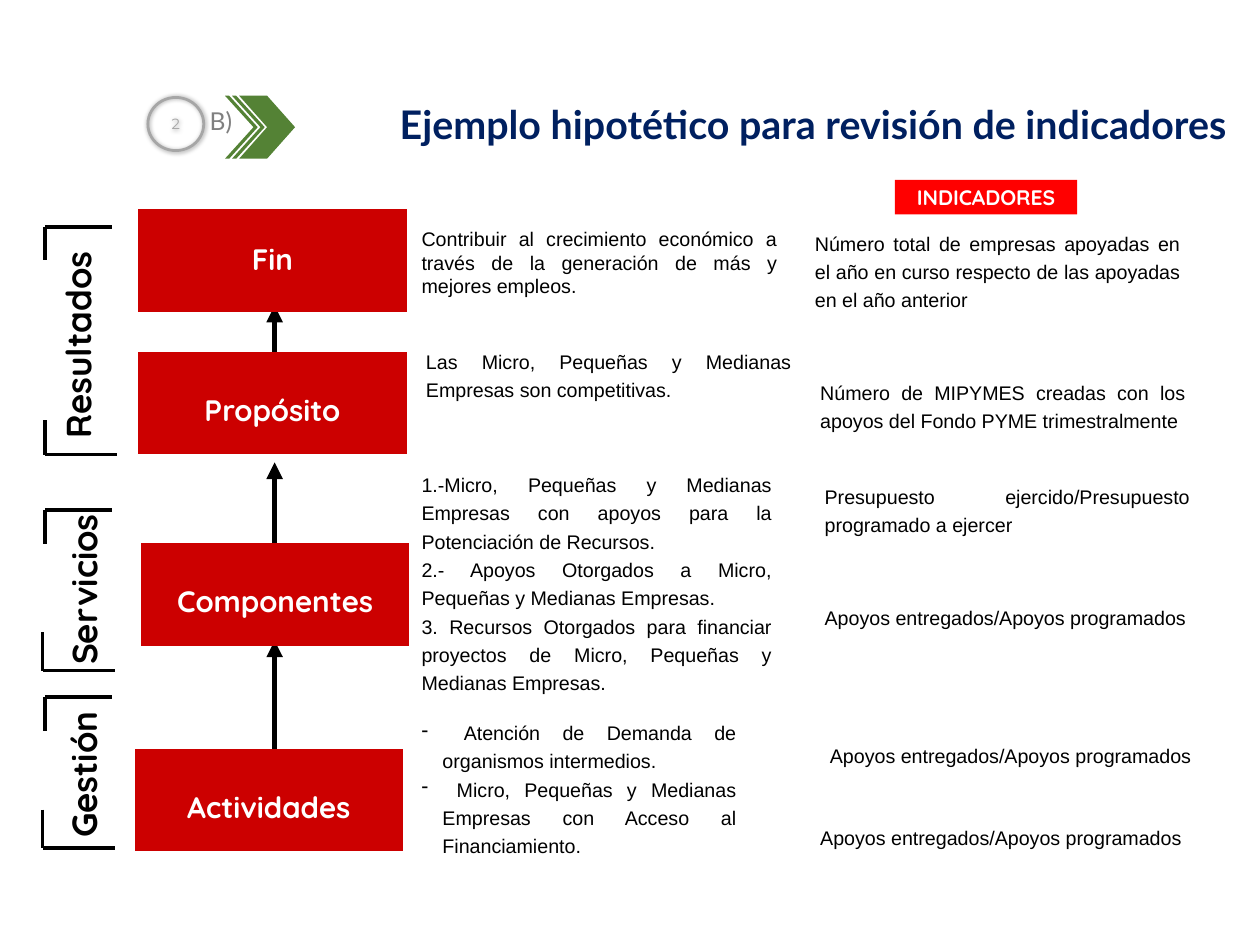
"""Build a slide on reviewing the indicators of a results hierarchy."""
import pptx
import pptx.dml.color
import pptx.enum.shapes
import pptx.enum.text
import pptx.oxml
import pptx.oxml.ns
import pptx.util

Pt = pptx.util.Pt
SHAPE = pptx.enum.shapes.MSO_SHAPE
ALIGN = pptx.enum.text.PP_ALIGN
ANCHOR = pptx.enum.text.MSO_ANCHOR

TITLE = "Ejemplo hipotético para revisión de indicadores"
DELIVERED = "Apoyos entregados/Apoyos programados"

# name, left, top, extra inset above the name
LEVELS = [
    ("Fin", 112.3, 170, 0),
    ("Propósito", 112.3, 285.8, 14),
    ("Componentes", 114.5, 441.4, 14),
    ("Actividades", 109.4, 608.4, 14),
]
LEVEL_W, LEVEL_H = 218.2, 83.5
ARROW_X, ARROW_LENGTH = 223.2, 88
ARROW_TIPS = [248.4, 375.8, 520.6]

# left, top, width, height, line spacing, paragraphs
SUMMARIES = [
    (335.5, 180, 303.1, 65.5, 1.0, [
        "Contribuir al crecimiento económico a través de la generación de más y mejores empleos."]),
    (339.1, 275.8, 311, 54, 1.2, [
        "Las Micro, Pequeñas y Medianas Empresas son competitivas."]),
    (335.5, 374.4, 298.8, 193.7, 1.2, [
        "1.-Micro, Pequeñas y Medianas Empresas con apoyos para la Potenciación de Recursos.",
        "2.- Apoyos Otorgados a Micro, Pequeñas y Medianas Empresas.",
        "3. Recursos Otorgados para financiar proyectos de Micro, Pequeñas y Medianas Empresas."]),
]
ACTIVITIES = (335.5, 576.7, 270, 123.8, 1.2, [
    " Atención de Demanda de organismos intermedios.",
    " Micro, Pequeñas y Medianas Empresas con Acceso al Financiamiento."])

# left, top, height, text
INDICATORS = [
    (655.2, 180, 77, "Número total de empresas apoyadas en el año en curso respecto de las apoyadas en el año anterior"),
    (659.5, 303.1, 51.8, "Número de MIPYMES creadas con los apoyos del Fondo PYME trimestralmente"),
    (663.1, 388.1, 51.8, "Presupuesto ejercido/Presupuesto programado a ejercer"),
    (663.1, 485.3, 30.2, DELIVERED),
    (667.4, 599, 28.1, DELIVERED),
    (659.5, 666, 28.1, DELIVERED),
]
INDICATOR_W = 311

# name, top, bottom, lower left, lower stub, name centre x, centre y, name width
STAGES = [
    ("Resultados", 184.3, 369.4, 36.7, 28, 64.8, 280.4, 185.8),
    ("Servicios", 414.7, 545, 34.6, 31, 69.8, 479.2, 142.6),
    ("Gestión", 566.6, 689, 34.6, 31, 69.5, 629.6, 121.7),
]
BRACKET_LEFT, BRACKET_RIGHT, UPPER_STUB, LOWER_W = 36.7, 91.4, 27.4, 58.5
STAGE_H = 38.2

# left, width, adjustment
CHEVRONS = [(194.4, 45.4, 0.5), (188.6, 26.6, 0.87), (182.9, 26.6, 0.87)]


def rgb(value):
    return pptx.dml.color.RGBColor.from_string(value)


def add_xml(parent, tag, content="", **attrs):
    attributes = " ".join(f'{k}="{v}"' for k, v in attrs.items())
    node = pptx.oxml.parse_xml(
        f'<a:{tag} {pptx.oxml.ns.nsdecls("a")} {attributes}>{content}</a:{tag}>')
    parent.append(node)


def write(sp, paragraphs, size, font, color, align, anchor=ANCHOR.BOTTOM,
          spacing=1.0, bold=False, wrap=True, grow=True, bullet=None):
    tf = sp.text_frame
    tf.word_wrap = wrap
    tf.vertical_anchor = anchor
    if grow:
        tf.auto_size = pptx.enum.text.MSO_AUTO_SIZE.SHAPE_TO_FIT_TEXT
    for i, text in enumerate(paragraphs):
        p = tf.add_paragraph() if i else tf.paragraphs[0]
        if bullet:
            pPr = p._p.get_or_add_pPr()
            pPr.set("marL", str(Pt(17)))
            pPr.set("indent", str(-Pt(17)))
            add_xml(pPr, "buChar", char=bullet)
        p.alignment = align
        p.line_spacing = spacing
        r = p.add_run()
        r.text = text
        r.font.size = Pt(size)
        r.font.name = font
        r.font.bold = bold
        r.font.color.rgb = rgb(color)


def add_box(s, x, y, w, h):
    return s.shapes.add_textbox(Pt(x), Pt(y), Pt(w), Pt(h))


def add_body(s, x, y, w, h, spacing, paragraphs, bullet=None):
    write(add_box(s, x, y, w, h), paragraphs, 16, "Arial", "000000",
          ALIGN.JUSTIFY, spacing=spacing, bullet=bullet)


def add_shape(s, kind, x, y, w, h, fill=None):
    sp = s.shapes.add_shape(kind, Pt(x), Pt(y), Pt(w), Pt(h))
    sp.shadow.inherit = False
    sp.line.fill.background()
    if fill:
        sp.fill.solid()
        sp.fill.fore_color.rgb = rgb(fill)
    else:
        sp.fill.background()
    return sp


def add_line(s, x1, y1, x2, y2, width, arrow=False):
    sp = s.shapes.add_connector(pptx.enum.shapes.MSO_CONNECTOR.STRAIGHT,
                                Pt(x1), Pt(y1), Pt(x2), Pt(y2))
    sp.line.width = Pt(width)
    sp.line.color.rgb = rgb("000000")
    if arrow:
        add_xml(sp.line._get_or_add_ln(), "tailEnd", type="triangle")
    add_xml(sp._element.spPr, "effectLst")


def add_header(s):
    write(add_box(s, 222.5, 77.8, 782, 46.1), [TITLE], 32, "Lato", "002060",
          ALIGN.RIGHT, ANCHOR.TOP, bold=True)
    for x, w, adjustment in CHEVRONS:
        sp = add_shape(s, SHAPE.CHEVRON, x, 77.8, w, 51.1, "548235")
        sp.adjustments[0] = adjustment
    write(add_box(s, 163.4, 82.8, 33.8, 31.7), ["B)"], 20, "Lato", "808080",
          ALIGN.LEFT, ANCHOR.TOP, wrap=False)
    sp = add_shape(s, SHAPE.OVAL, 120.2, 79.2, 45.4, 43.2)
    sp.line.color.rgb = rgb("A6A6A6")
    sp.line.width = Pt(2.25)
    effects = sp._element.spPr.find(pptx.oxml.ns.qn("a:effectLst"))
    add_xml(effects, "outerShdw",
            '<a:srgbClr val="000000"><a:alpha val="40000"/></a:srgbClr>',
            blurRad=Pt(4), dist=Pt(1), dir=45 * 60000)
    write(sp, ["2"], 12, "Montserrat", "A6A6A6", ALIGN.CENTER, ANCHOR.MIDDLE, grow=False)
    sp = add_shape(s, SHAPE.RECTANGLE, 727.2, 146.2, 148.3, 28.1, "FF0000")
    write(sp, ["INDICADORES"], 17.1, "Quicksand", "FFFFFF", ALIGN.CENTER, bold=True)


def add_levels(s):
    for tip in ARROW_TIPS:
        add_line(s, ARROW_X, tip + ARROW_LENGTH, ARROW_X, tip, 4.5, arrow=True)
    for name, x, y, inset in LEVELS:
        sp = add_shape(s, SHAPE.ACTION_BUTTON_CUSTOM, x, y, LEVEL_W, LEVEL_H, "CC0000")
        write(sp, [name], 24, "Quicksand", "FFFFFF", ALIGN.CENTER, ANCHOR.MIDDLE,
              spacing=0.9, bold=True, grow=False)
        sp.text_frame.margin_top = Pt(3.6 + inset)


def add_stages(s):
    for name, top, bottom, left, stub, cx, cy, w in STAGES:
        add_line(s, BRACKET_LEFT, top, BRACKET_RIGHT, top, 3)
        add_line(s, BRACKET_LEFT, top, BRACKET_LEFT, top + UPPER_STUB, 3)
        add_line(s, left, bottom, left + LOWER_W, bottom, 3)
        add_line(s, left, bottom - stub, left, bottom, 3)
        sp = add_box(s, cx - w / 2, cy - STAGE_H / 2, w, STAGE_H)
        sp.rotation = 270
        write(sp, [name], 28.4, "Quicksand", "000000", ALIGN.CENTER,
              spacing=0.9, bold=True, wrap=False)


def main():
    prs = pptx.Presentation()
    prs.slide_width, prs.slide_height = Pt(1024), Pt(768)
    s = prs.slides.add_slide(prs.slide_layouts[6])
    add_header(s)
    add_levels(s)
    add_stages(s)
    for summary in SUMMARIES:
        add_body(s, *summary)
    add_body(s, *ACTIVITIES, bullet="-")
    for x, y, h, text in INDICATORS:
        add_body(s, x, y, INDICATOR_W, h, 1.2, [text])
    prs.save("out.pptx")


if __name__ == "__main__":
    main()
